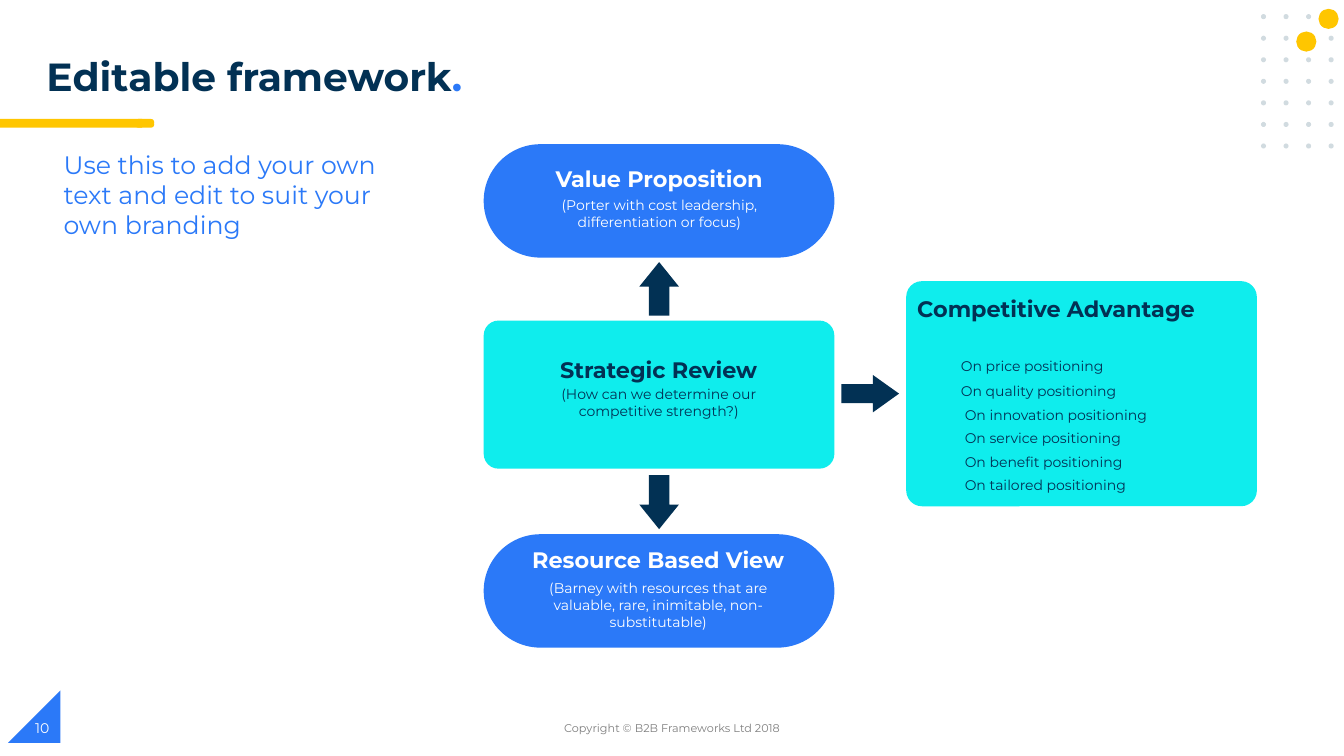
from pptx import Presentation
from pptx.dml.color import RGBColor
from pptx.enum.shapes import MSO_SHAPE
from pptx.enum.text import MSO_ANCHOR, MSO_AUTO_SIZE, PP_ALIGN
from pptx.util import Pt

OVAL, RECT, ROUND = MSO_SHAPE.OVAL, MSO_SHAPE.RECTANGLE, MSO_SHAPE.ROUNDED_RECTANGLE
CAP, WEDGE = MSO_SHAPE.FLOWCHART_TERMINATOR, MSO_SHAPE.RIGHT_TRIANGLE
UP, DOWN, RIGHT = MSO_SHAPE.UP_ARROW, MSO_SHAPE.DOWN_ARROW, MSO_SHAPE.RIGHT_ARROW
TOP, MIDDLE = MSO_ANCHOR.TOP, MSO_ANCHOR.MIDDLE
LEFT, CENTER = PP_ALIGN.LEFT, PP_ALIGN.CENTER
FIXED = MSO_AUTO_SIZE.NONE

FONT = "Montserrat"
COLORS = {
    "navy": "023154", "blue": "2B79F8", "cyan": "0FEDED", "gold": "FFC600",
    "dot": "D1DBE0", "gray": "7F7F7F", "white": "FFFFFF",
}

deck = Presentation()
deck.slide_width, deck.slide_height = Pt(960), Pt(540)
slide = deck.slides.add_slide(deck.slide_layouts[1])
shapes = slide.shapes


def draw(kind, box, color, *bends):
    shape = shapes.add_shape(kind, *map(Pt, box))
    shape.shadow.inherit = False
    shape.fill.solid()
    shape.fill.fore_color.rgb = RGBColor.from_string(COLORS[color])
    shape.line.fill.background()
    for i, bend in enumerate(bends):
        shape.adjustments[i] = bend
    return shape


def style(par, size, color, bold=False, align=LEFT):
    par.alignment = align
    for run in par.runs:
        run.font.name = FONT
        run.font.size = Pt(size)
        run.font.bold = bold
        run.font.color.rgb = RGBColor.from_string(COLORS[color])


wedge = draw(WEDGE, (5.8, 493.2, 37.4, 37.4), "blue")
wedge._element.spPr.xfrm.set("flipH", "1")
for top in (85, 86.6):
    draw(CAP, (96.5, top, 13.7, 4.6), "gold")
    draw(RECT, (0, top, 101.5, 4.6), "gold")
for row in range(7):
    for col in range(4):
        draw(OVAL, (900.7 + 16.1 * col, 10.1 + 15.4 * row, 3.6, 3.6), "dot")
for left, top in ((941.8, 6.3), (925.9, 22.5)):
    draw(OVAL, (left, top, 14.4, 14.4), "gold")

title = shapes.title
title.left, title.top, title.width, title.height = map(Pt, (26, 37.4, 406, 43.2))
frame = title.text_frame
frame.auto_size, frame.vertical_anchor = FIXED, TOP
par = frame.paragraphs[0]
par.text = "Editable framework"
par.add_run().text = "."
par.line_spacing = 0.9
style(par, 28, "navy", True)
par.runs[1].font.color.rgb = RGBColor.from_string(COLORS["blue"])

body = slide.placeholders[1]
body.left, body.top, body.width, body.height = map(Pt, (38.2, 103, 266.4, 161.3))
frame = body.text_frame
frame.auto_size, frame.vertical_anchor = FIXED, TOP
frame.text = "Use this to add your own text and edit to suit your own branding"
par = frame.paragraphs[0]
props = par._p.get_or_add_pPr()
props.set("marL", "0")
props.set("indent", "0")
props.insert_element_before(props.makeelement(
    "{http://schemas.openxmlformats.org/drawingml/2006/main}buNone", {}), "a:tabLst")
par.space_before = Pt(0)
style(par, 18, "blue")

for box, label, size, color, align in (
    ((318.2, 505.4, 324, 28.8), "Copyright © B2B Frameworks Ltd 2018", 8, "gray", CENTER),
    ((18, 505.4, 216, 28.8), "10", 10, "white", LEFT),
):
    frame = shapes.add_textbox(*map(Pt, box)).text_frame
    frame.word_wrap, frame.vertical_anchor = True, MIDDLE
    frame.text = label
    style(frame.paragraphs[0], size, color, False, align)

for box, color, bend in (
    ((345.5, 103, 250.5, 81), "blue", 0.5),
    ((345.5, 381.6, 250.5, 81), "blue", 0.5),
    ((345.5, 229, 250.5, 105.8), "cyan", 0.1),
    ((647.3, 200.8, 250.5, 160.8), "cyan", 0.07),
):
    draw(ROUND, box, color, bend)

for kind, box, bends in (
    (UP, (456.7, 187.2, 28.3, 38.2), (0.52, 0.62)),
    (DOWN, (456.7, 339.4, 28.3, 38.6), (0.52, 0.62)),
    (RIGHT, (601, 267.8, 41.2, 26.8), (0.51, 0.7)),
):
    draw(kind, box, "navy", *bends)

NOTES = (
    ((383.8, 113, 174.2, 52.6), 5, "white", 3, 0, "Value Proposition",
     "(Porter with cost leadership, differentiation or focus)"),
    ((364.3, 383.8, 211.7, 67), 6.5, "white", 4, 17, "Resource Based View",
     "(Barney with resources that are valuable, rare, inimitable, non-substitutable)"),
    ((385.9, 249.8, 169.2, 50.4), 4.3, "navy", 2, 0, "Strategic Review",
     "(How can we determine our competitive strength?)"),
    ((655.2, 201.6, 233.3, 147.6), 9.4, "navy", 0, 0, "Competitive Advantage",
     "On price positioning", "On quality positioning",
     "On innovation positioning", "On service positioning",
     "On benefit positioning", "On tailored positioning"),
)
for box, inset, color, gap, pad, head, *lines in NOTES:
    frame = shapes.add_textbox(*map(Pt, box)).text_frame
    frame.word_wrap = True
    frame.margin_left = frame.margin_right = frame.margin_bottom = 0
    frame.margin_top = Pt(inset)
    frame.text = "\n".join([head, *lines])
    first, *rest = frame.paragraphs
    listed = len(rest) > 1
    align = LEFT if listed else CENTER
    style(first, 16, color, True, align)
    for i, par in enumerate(rest):
        style(par, 10, color, False, align)
        props = par._p.get_or_add_pPr()
        if listed:
            props.set("marL", str(Pt(31.2 if i < 2 else 34)))
            par.line_spacing = 1.4
            par.space_before = Pt((20.5, 1, 0, 0, 0, 0)[i])
        else:
            props.set("marL", str(Pt(pad)))
            props.set("marR", str(Pt(pad)))
            par.line_spacing = 1.02
            par.space_before = Pt(gap)

deck.save("out.pptx")
